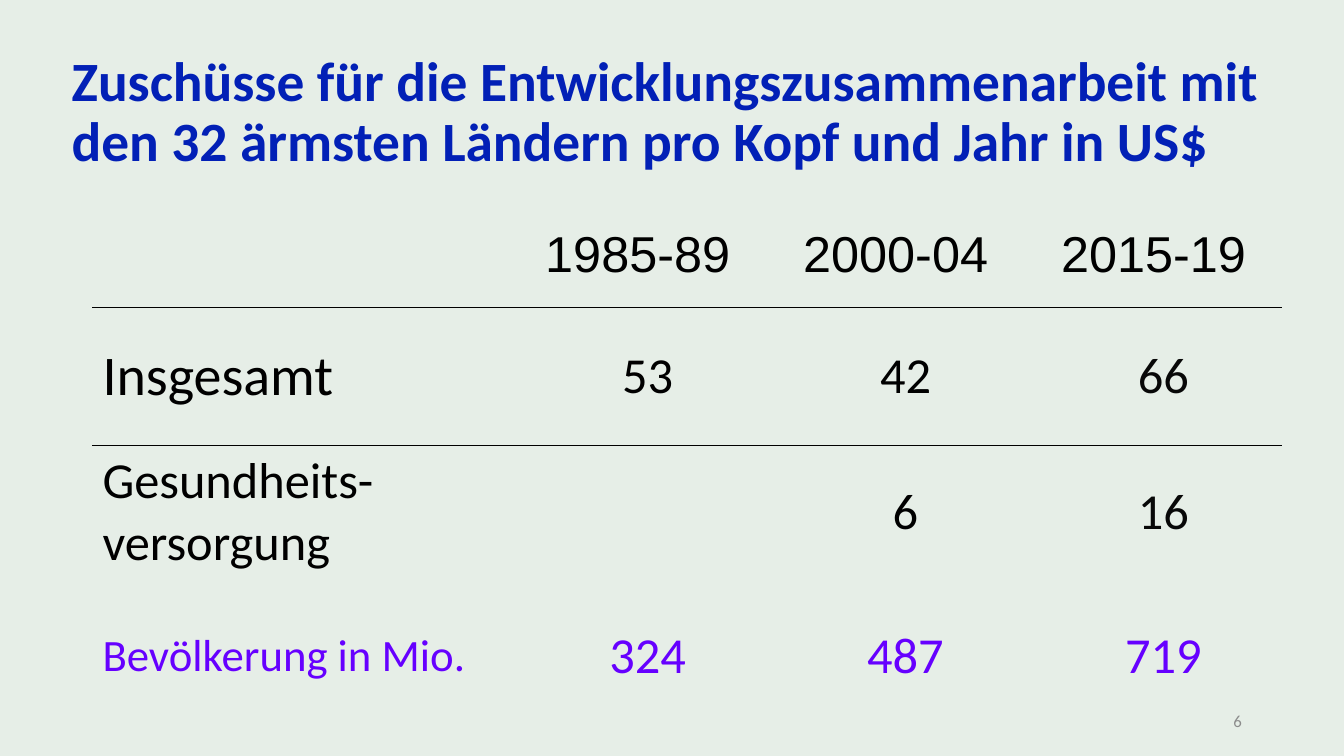
from dataclasses import dataclass

from lxml import etree
from pptx import Presentation
from pptx.dml.color import RGBColor
from pptx.enum.text import MSO_ANCHOR, MSO_AUTO_SIZE, PP_ALIGN
from pptx.oxml.ns import qn
from pptx.util import Cm, Pt

LEFT, CENTER, RIGHT = PP_ALIGN.LEFT, PP_ALIGN.CENTER, PP_ALIGN.RIGHT
MIDDLE = MSO_ANCHOR.MIDDLE
NO_AUTOFIT = MSO_AUTO_SIZE.NONE
TITLE_ONLY = 5
PLAIN_TABLE_STYLE = "{2D5ABB26-0587-4C30-8999-92F81FD0307C}"


@dataclass(frozen=True)
class Theme:
    background: str = "E6EEE7"
    title: str = "0220B6"
    text: str = "000000"
    latest: str = "080808"
    population: str = "6600FF"
    page: str = "8C8C8C"
    body_font: str = "Calibri"
    header_font: str = "Arial"
    title_size: float = 39.6
    total_size: float = 40
    value_size: float = 36
    population_size: float = 32
    page_size: float = 12
    rule_width: float = 1


@dataclass(frozen=True)
class TableRow:
    height: float
    label: str
    values: tuple
    label_size: float
    colors: tuple
    font: str
    indent: float = 0.5
    ruled: bool = False


class SlideBuilder:
    def __init__(self, slide, theme):
        self.slide = slide
        self.theme = theme
        fill = slide.background.fill
        fill.solid()
        fill.fore_color.rgb = RGBColor.from_string(theme.background)

    def add_text(self, frame, text, size, color, font=None, align=LEFT, bold=False):
        paragraph = frame.paragraphs[0]
        paragraph.alignment = align
        run = paragraph.add_run()
        run.text = text
        run.font.size = Pt(size)
        run.font.name = font or self.theme.body_font
        run.font.bold = bold
        run.font.color.rgb = RGBColor.from_string(color)
        return paragraph

    def title(self, text, left, top, width, height):
        heading = self.slide.shapes.title
        heading.left, heading.top = Cm(left), Cm(top)
        heading.width, heading.height = Cm(width), Cm(height)
        frame = heading.text_frame
        frame.word_wrap = True
        frame.auto_size = NO_AUTOFIT
        frame.vertical_anchor = MIDDLE
        paragraph = self.add_text(frame, text, self.theme.title_size,
                                  self.theme.title, bold=True)
        paragraph.line_spacing = 0.9

    def page_number(self, text, left, top, width, height):
        box = self.slide.shapes.add_textbox(Cm(left), Cm(top), Cm(width), Cm(height))
        frame = box.text_frame
        frame.word_wrap = True
        frame.vertical_anchor = MIDDLE
        self.add_text(frame, text, self.theme.page_size, self.theme.page, align=RIGHT)

    def rule_below(self, cell):
        border = etree.Element(qn("a:lnB"), w=str(Pt(self.theme.rule_width)))
        fill = etree.SubElement(border, qn("a:solidFill"))
        etree.SubElement(fill, qn("a:srgbClr"), val=self.theme.text)
        cell._tc.get_or_add_tcPr().insert(0, border)

    def table(self, rows, left, top, column_widths):
        frame = self.slide.shapes.add_table(
            len(rows), len(column_widths), Cm(left), Cm(top),
            Cm(sum(column_widths)), Cm(sum(row.height for row in rows)))
        grid = frame.table
        grid.first_row = grid.horz_banding = False
        grid._tbl.tblPr.find(qn("a:tableStyleId")).text = PLAIN_TABLE_STYLE
        for column, width in zip(grid.columns, column_widths):
            column.width = Cm(width)
        for row_index, row in enumerate(rows):
            grid.rows[row_index].height = Cm(row.height)
            for column_index, text in enumerate((row.label, *row.values)):
                cell = grid.cell(row_index, column_index)
                cell.fill.background()
                cell.vertical_anchor = MIDDLE
                if row.ruled:
                    self.rule_below(cell)
                if text:
                    self.table_text(cell, text, row, column_index)

    def table_text(self, cell, text, row, column_index):
        is_label = column_index == 0
        paragraph = self.add_text(
            cell.text_frame, text,
            row.label_size if is_label else self.theme.value_size,
            row.colors[column_index], row.font, LEFT if is_label else CENTER)
        if not is_label and row.indent:
            properties = paragraph._p.get_or_add_pPr()
            properties.set("marL", str(Cm(row.indent)))
            properties.set("indent", "0")


def main():
    theme = Theme()
    presentation = Presentation()
    presentation.slide_width, presentation.slide_height = Cm(33.87), Cm(19.05)
    layout = presentation.slide_layouts[TITLE_ONLY]
    builder = SlideBuilder(presentation.slides.add_slide(layout), theme)

    builder.title("Zuschüsse für die Entwicklungszusammenarbeit mit "
                  "den 32 ärmsten Ländern pro Kopf und Jahr in US$",
                  1.55, 1.02, 30.78, 3.68)

    grant_colors = (theme.text,) * 3 + (theme.latest,)
    rows = [
        TableRow(2.67, "", ("1985-89", "2000-04", "2015-19"), theme.value_size,
                 (theme.text,) * 4, theme.header_font, indent=0, ruled=True),
        TableRow(3.48, "Insgesamt", ("53", "42", "66"), theme.total_size,
                 grant_colors, theme.body_font, ruled=True),
        TableRow(3.18, "Gesundheits-versorgung", ("", "6", "16"), theme.value_size,
                 grant_colors, theme.body_font),
        TableRow(3.91, "Bevölkerung in Mio.", ("324", "487", "719"),
                 theme.population_size, (theme.population,) * 4, theme.body_font),
    ]
    builder.table(rows, 2.33, 5.08, (10.49,) + (6.5,) * 3)
    builder.page_number("6", 23.93, 17.65, 7.62, 1.02)
    presentation.save("out.pptx")


if __name__ == "__main__":
    main()
